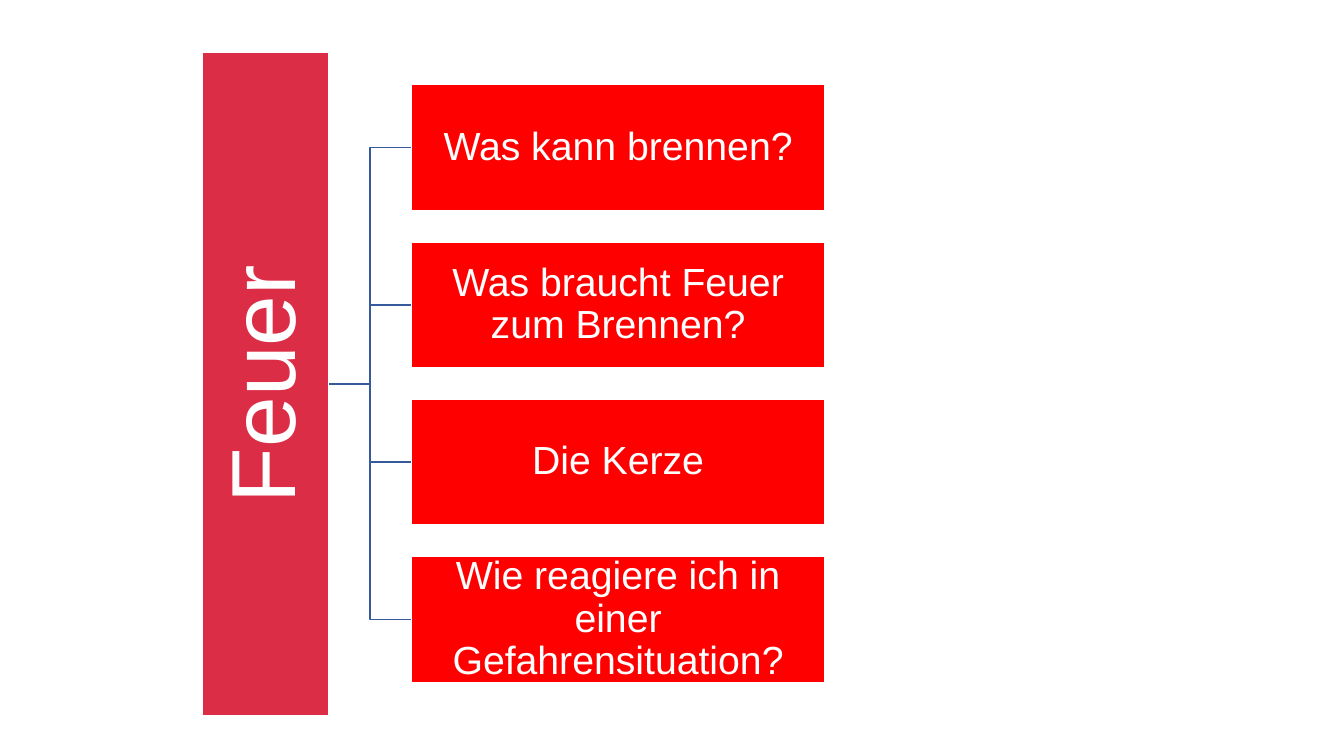
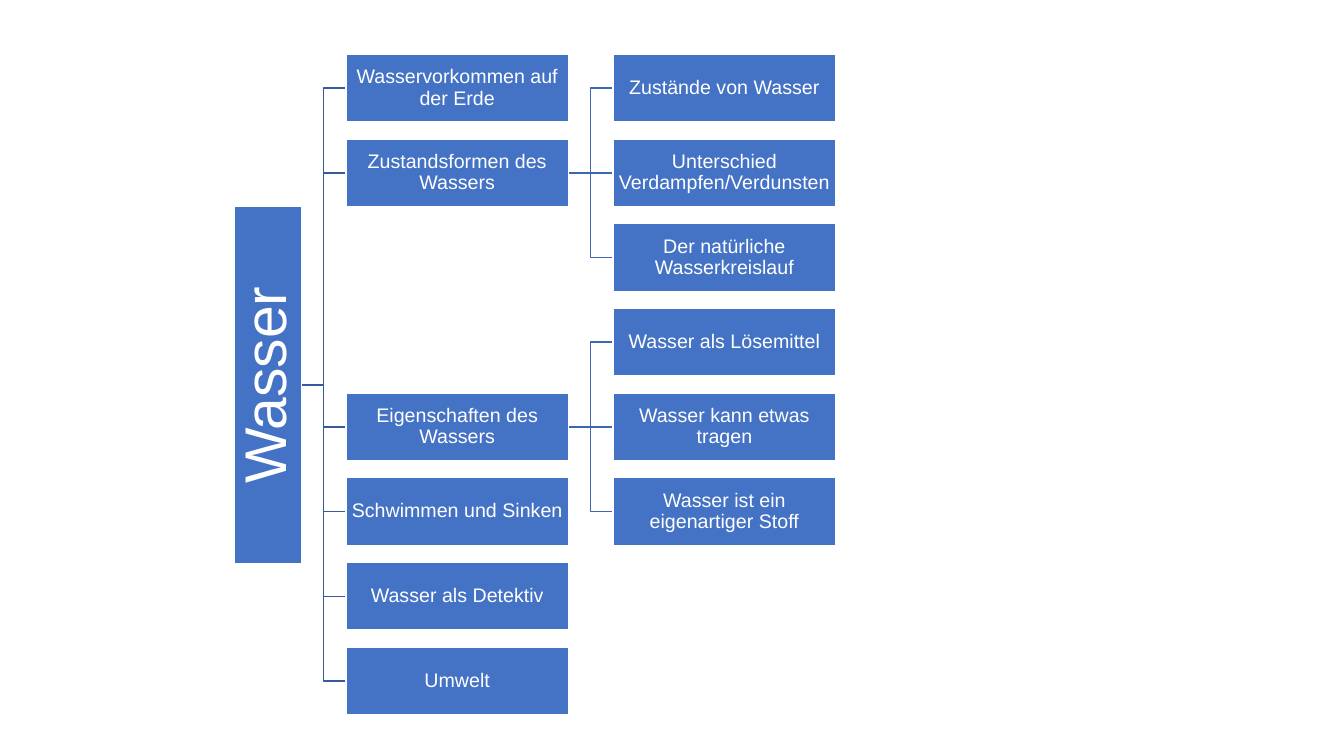
from dataclasses import dataclass

from lxml import etree
from pptx import Presentation
from pptx.dml.color import RGBColor
from pptx.enum.shapes import MSO_CONNECTOR, MSO_SHAPE
from pptx.enum.text import MSO_ANCHOR, PP_ALIGN
from pptx.oxml.ns import qn
from pptx.util import Inches, Pt

RECTANGLE = MSO_SHAPE.RECTANGLE
ELBOW, STRAIGHT = MSO_CONNECTOR.ELBOW, MSO_CONNECTOR.STRAIGHT
CENTER, MIDDLE = PP_ALIGN.CENTER, MSO_ANCHOR.MIDDLE
LEFT_SITE, RIGHT_SITE = 1, 3

FONT = "Arial"
WHITE = RGBColor(0xFF, 0xFF, 0xFF)
CRIMSON = RGBColor(0xDB, 0x2D, 0x46)
RED = RGBColor(0xFF, 0x00, 0x00)
BLUE = RGBColor(0x44, 0x72, 0xC4)
TOPIC_LINE = RGBColor(0x36, 0x5B, 0x9D)
SUBTOPIC_LINE = RGBColor(0x3E, 0x67, 0xB2)


@dataclass
class BoxStyle:
    """Look of the boxes on one level of a tree."""
    width: float
    height: float
    fill: RGBColor
    size: int
    inset: float


@dataclass
class TreeLayout:
    """Places of a tree: the root, then rows of equal pitch and columns of equal gap."""
    root: BoxStyle
    topic: BoxStyle
    root_left: float
    root_top: float
    first_row: float
    pitch: float
    gap: float


FIRE_LAYOUT = TreeLayout(
    BoxStyle(1.25, 6.58, CRIMSON, 65, 0.05), BoxStyle(4.1, 1.25, RED, 28, 0.02),
    root_left=2.01, root_top=0.52, first_row=0.84, pitch=1.56, gap=0.82)
WATER_LAYOUT = TreeLayout(
    BoxStyle(0.67, 3.54, BLUE, 42, 0.03), BoxStyle(2.21, 0.67, BLUE, 14, 0.01),
    root_left=2.32, root_top=2.05, first_row=0.54, pitch=0.84, gap=0.44)

# Each topic: row, wording, subtopics
FIRE_TOPICS = [
    (0, "Was kann brennen?", []),
    (1, "Was braucht Feuer zum Brennen?", []),
    (2, "Die Kerze", []),
    (3, "Wie reagiere ich in einer Gefahrensituation?", []),
]
WATER_TOPICS = [
    (0, "Wasservorkommen auf der Erde", []),
    (1, "Zustandsformen des Wassers",
     ["Zustände von Wasser", "Unterschied Verdampfen/Verdunsten",
      "Der natürliche Wasserkreislauf"]),
    (4, "Eigenschaften des Wassers",
     ["Wasser als Lösemittel", "Wasser kann etwas tragen",
      "Wasser ist ein eigenartiger Stoff"]),
    (5, "Schwimmen und Sinken", []),
    (6, "Wasser als Detektiv", []),
    (7, "Umwelt", []),
]


def add_box(page, text, left, top, style):
    box = page.shapes.add_shape(
        RECTANGLE, Inches(left), Inches(top), Inches(style.width), Inches(style.height))
    box.shadow.inherit = False
    box.fill.solid()
    box.fill.fore_color.rgb = style.fill
    box.line.color.rgb = WHITE
    box.line.width = Pt(1)

    frame = box.text_frame
    frame.word_wrap = True
    frame.vertical_anchor = MIDDLE
    frame.margin_left = frame.margin_right = Inches(style.inset)
    frame.margin_top = frame.margin_bottom = Inches(style.inset)
    para = frame.paragraphs[0]
    para.text = text
    para.alignment = CENTER
    para.line_spacing = 0.9
    para.font.name = FONT
    para.font.size = Pt(style.size)
    para.font.color.rgb = WHITE
    return box


def add_root(page, text, layout):
    root = add_box(page, text, layout.root_left, layout.root_top, layout.root)
    # Text runs upwards
    root.text_frame._txBody.find(qn("a:bodyPr")).set("vert", "vert270")
    return root


def join(page, parent, child, color):
    """Link the right side of parent with the left side of child, behind the boxes."""
    level = parent.top + parent.height // 2 == child.top + child.height // 2
    link = page.shapes.add_connector(STRAIGHT if level else ELBOW, 0, 0, 0, 0)
    link.begin_connect(parent, RIGHT_SITE)
    link.end_connect(child, LEFT_SITE)
    link.line.color.rgb = color
    link.line.width = Pt(1)
    element = link._element
    etree.SubElement(element.spPr, qn("a:effectLst"))
    element.getparent().insert(2, element)


def add_tree(page, title, topics, layout):
    root = add_root(page, title, layout)
    topic_left = layout.root_left + layout.root.width + layout.gap
    subtopic_left = topic_left + layout.topic.width + layout.gap

    def add_child(parent, text, left, row, color):
        top = layout.first_row + row * layout.pitch
        child = add_box(page, text, left, top, layout.topic)
        join(page, parent, child, color)
        return child

    for row, text, subtopics in topics:
        topic = add_child(root, text, topic_left, row, TOPIC_LINE)
        # Subtopics are centred on the row of their topic
        first = row - len(subtopics) // 2
        for subrow, subtext in enumerate(subtopics, first):
            add_child(topic, subtext, subtopic_left, subrow, SUBTOPIC_LINE)


def main():
    deck = Presentation()
    deck.slide_width, deck.slide_height = Inches(13.33), Inches(7.5)
    blank = deck.slide_layouts[6]
    for title, topics, layout in (("Feuer", FIRE_TOPICS, FIRE_LAYOUT),
                                  ("Wasser", WATER_TOPICS, WATER_LAYOUT)):
        add_tree(deck.slides.add_slide(blank), title, topics, layout)
    deck.save("out.pptx")


if __name__ == "__main__":
    main()
